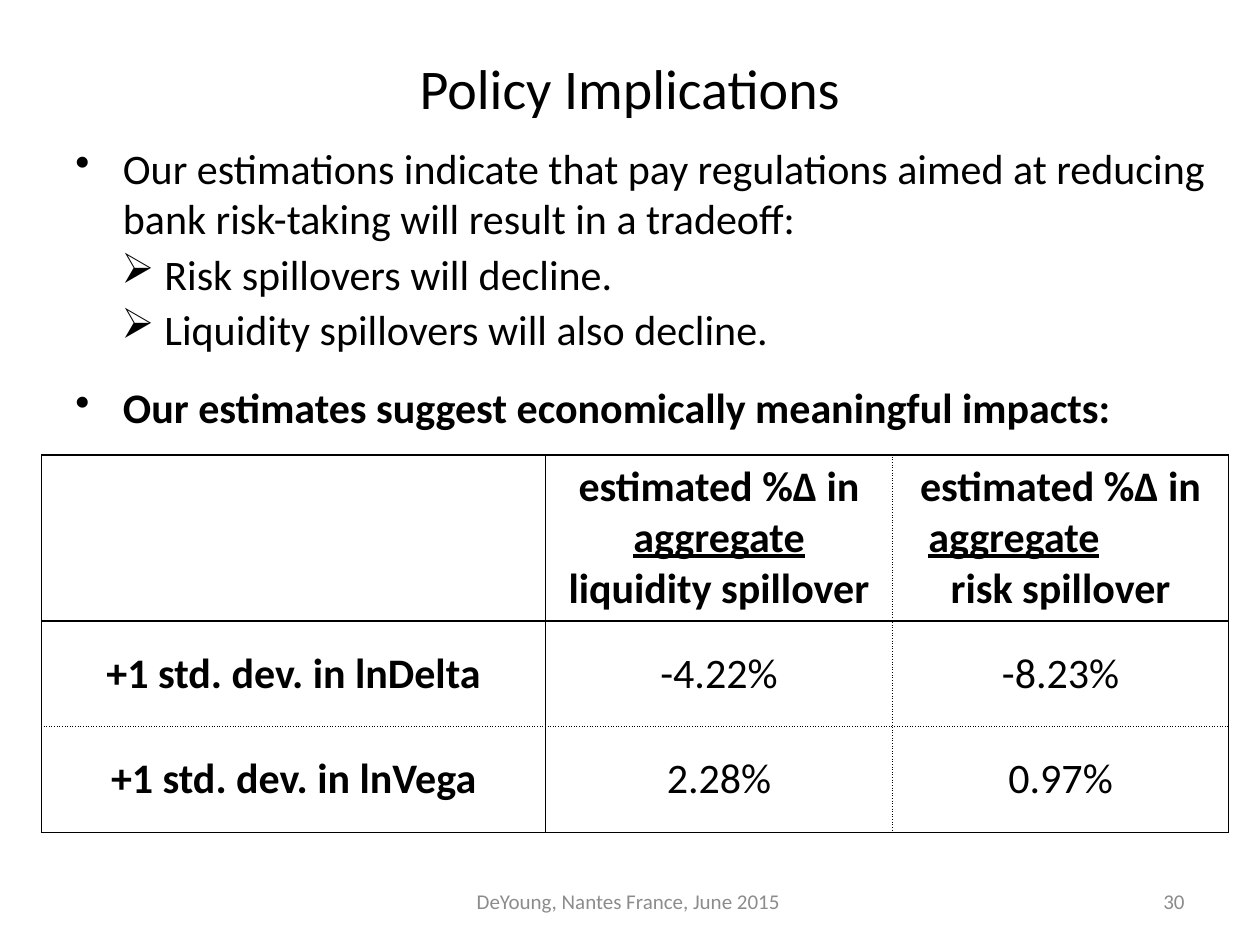
from dataclasses import dataclass
from lxml.etree import SubElement as Sub
from pptx import Presentation
from pptx.dml.color import RGBColor as RGB
from pptx.enum.text import MSO_ANCHOR as Anchor, PP_ALIGN as Align
from pptx.oxml.ns import qn
from pptx.util import Cm, Pt


@dataclass(frozen=True)
class Theme:
    font: str = "Calibri"
    ink: RGB = RGB(0, 0, 0)
    gray: RGB = RGB(0x8C, 0x8C, 0x8C)
    paper: RGB = RGB(255, 255, 255)
    head: int = 32
    body: int = 24
    foot: int = 12


THEME = Theme()
POINTS = [
    ("•", "Our estimations indicate that pay regulations aimed at reducing "
          "bank risk-taking will result in a tradeoff:", {}, {}),
    ("➢", " Risk spillovers will decline.", {}, {}),
    ("➢", " Liquidity spillovers will also decline.", {}, {}),
    ("•", "Our estimates suggest economically meaningful impacts:",
     {"bold": True}, {"space_before": Pt(12.8)}),
]
HANG = {"•": -0.96, "➢": -0.03}
ROWS = [("+1 std. dev. in lnDelta", "-4.22%", "-8.23%"),
        ("+1 std. dev. in lnVega", "2.28%", "0.97%")]
COLS = [10.16, 6.99, 6.78]
HIGH = [3.35, 2.13, 2.13]


def set_all(item, look):
    for name, value in look.items():
        setattr(item, name, value)


def add_run(para, text, size=THEME.body, color=THEME.ink, **look):
    run = para.add_run()
    run.text = text
    set_all(run.font, {"name": THEME.font, "size": Pt(size), **look})
    run.font.color.rgb = color


def add_box(slide, box, anchor=Anchor.MIDDLE):
    frame = slide.shapes.add_textbox(*map(Cm, box)).text_frame
    set_all(frame, {"word_wrap": True, "vertical_anchor": anchor})
    return frame


def add_line(slide, box, text, size, color, align):
    para = add_box(slide, box).paragraphs[0]
    para.alignment = align
    add_run(para, text, size, color)


def next_para(frame, index):
    return frame.add_paragraph() if index else frame.paragraphs[0]


def add_list(slide, box):
    frame = add_box(slide, box, Anchor.TOP)
    for i, (mark, text, look, gaps) in enumerate(POINTS):
        para = next_para(frame, i)
        set_all(para, {"space_after": Pt(3), **gaps})
        props = para._p.get_or_add_pPr()
        props.set("marL", str(Cm(0.96)))
        props.set("indent", str(Cm(HANG[mark])))
        Sub(props, qn("a:buChar"), char=mark)
        add_run(para, text, **look)


def add_edges(cell, row, col):
    props = cell._tc.get_or_add_tcPr()
    sides = {"L": col == 2, "R": col == 1, "T": row == 2, "B": row == 1}
    for side, dotted in sides.items():
        line = Sub(props, qn("a:ln" + side), w=str(Pt(1)))
        fill = Sub(line, qn("a:solidFill"))
        Sub(fill, qn("a:srgbClr"), val=str(THEME.ink))
        Sub(line, qn("a:prstDash"), val="sysDot" if dotted else "solid")


def add_heads(grid):
    wide, slim = grid.cell(0, 1).text_frame, grid.cell(0, 2).text_frame
    para = wide.paragraphs[0]
    para.alignment = Align.CENTER
    for text, under in (("estimated %Δ in ", False), ("aggregate", True),
                        (" liquidity spillover", False)):
        add_run(para, text, bold=True, underline=under)
    lines = [("estimated %Δ in", False, Align.CENTER),
             ("aggregate", True, Align.LEFT),
             ("risk spillover", False, Align.CENTER)]
    for i, (text, under, align) in enumerate(lines):
        para = next_para(slim, i)
        para.alignment = align
        if align == Align.LEFT:
            para._p.get_or_add_pPr().set("marL", str(Cm(0.47)))
        add_run(para, text, bold=True, underline=under)


def add_grid(slide, box):
    grid = slide.shapes.add_table(len(HIGH), len(COLS), *map(Cm, box)).table
    set_all(grid, {"first_row": False, "horz_banding": False})
    for col, width in zip(grid.columns, COLS):
        col.width = Cm(width)
    for r, high in enumerate(HIGH):
        grid.rows[r].height = Cm(high)
        for c in range(len(COLS)):
            cell = grid.cell(r, c)
            cell.vertical_anchor = Anchor.MIDDLE if r else Anchor.BOTTOM
            add_edges(cell, r, c)
            cell.fill.solid()
            cell.fill.fore_color.rgb = THEME.paper
            if r:
                para = cell.text_frame.paragraphs[0]
                para.alignment = Align.CENTER
                add_run(para, ROWS[r - 1][c], bold=c == 0)
    add_heads(grid)


def add_foot(slide, box):
    left, top, width, high = box
    add_line(slide, (left + 7.42, top, 8.05, high),
             "DeYoung, Nantes France, June 2015 ", THEME.foot, THEME.gray, Align.CENTER)
    add_line(slide, (left + width - 5.92, top, 5.92, high),
             "30", THEME.foot, THEME.gray, Align.RIGHT)


def main():
    deck = Presentation()
    set_all(deck, {"slide_width": Cm(25.4), "slide_height": Cm(19.05)})
    slide = deck.slides.add_slide(deck.slide_layouts[6])
    add_line(slide, (1.27, 0.76, 22.86, 1.98), "Policy Implications",
             THEME.head, THEME.ink, Align.CENTER)
    add_list(slide, (1.27, 2.74, 23.5, 14.91))
    add_foot(slide, (1.27, 17.65, 22.86, 1.02))
    add_grid(slide, (0.84, 9.17, sum(COLS), sum(HIGH)))
    deck.save("out.pptx")


if __name__ == "__main__":
    main()
